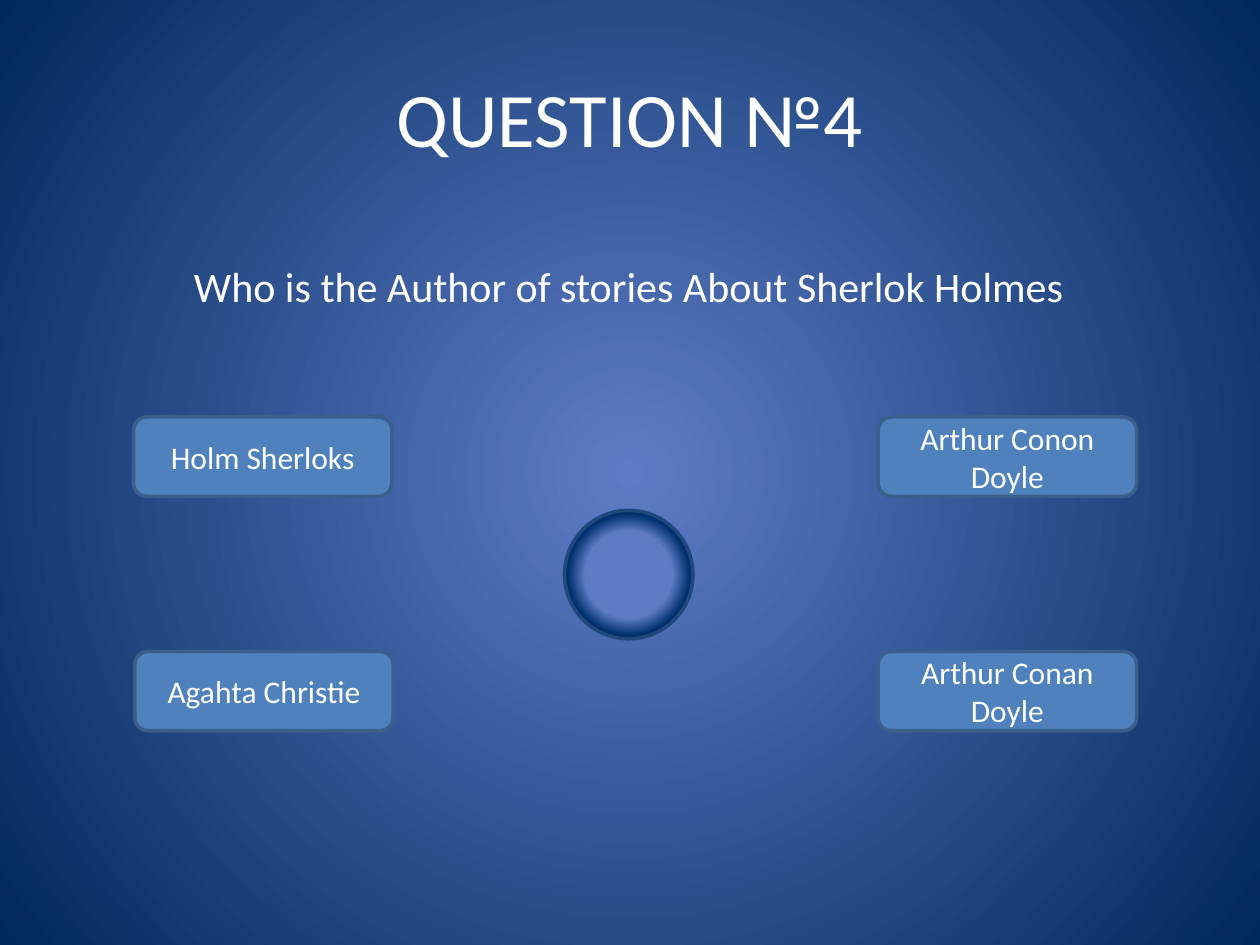
"""Build a quiz slide with a question and four answer buttons."""
from dataclasses import dataclass

import lxml.etree
import pptx
import pptx.dml.color
import pptx.dml.fill
import pptx.enum.shapes
import pptx.enum.text
import pptx.oxml.ns
import pptx.util

Inches = pptx.util.Inches
Shapes = pptx.enum.shapes.MSO_SHAPE
Anchor = pptx.enum.text.MSO_ANCHOR
qn = pptx.oxml.ns.qn

WHITE = "FFFFFF"
GLOW = "5E7CC5"
BUTTON_SIZE = (2.05, 0.63)


@dataclass
class Answer:
    text: str
    left: float
    top: float


ANSWERS = [
    Answer("Holm Sherloks", 1.06, 3.31),
    Answer("Arthur Conon Doyle", 6.97, 3.31),
    Answer("Agahta Christie", 1.07, 5.17),
    Answer("Arthur Conan Doyle", 6.97, 5.17),
]


def color(value: str) -> pptx.dml.color.RGBColor:
    return pptx.dml.color.RGBColor.from_string(value)


def radial_fill(fill: pptx.dml.fill.FillFormat, element, stops: list[tuple[float, str]]) -> None:
    fill.gradient()
    for stop, (position, value) in zip(fill.gradient_stops, stops):
        stop.position = position
        stop.color.rgb = color(value)
    gradient = next(element.iter(qn("a:gradFill")))
    gradient.remove(gradient.find(qn("a:lin")))
    circle = lxml.etree.SubElement(gradient, qn("a:path"), path="circle")
    center = dict.fromkeys("ltrb", "50000")
    lxml.etree.SubElement(circle, qn("a:fillToRect"), center)


def write(box, text: str, *, size: float, anchor=Anchor.MIDDLE) -> None:
    frame = box.text_frame
    frame.word_wrap = True
    frame.vertical_anchor = anchor
    para = frame.paragraphs[0]
    para.alignment = pptx.enum.text.PP_ALIGN.CENTER
    span = para.add_run()
    span.text = text
    span.font.name = "Calibri"
    span.font.size = pptx.util.Pt(size)
    span.font.color.rgb = color(WHITE)


def add_text(page, text: str, bounds: tuple[float, ...], **style) -> None:
    write(page.shapes.add_textbox(*map(Inches, bounds)), text, **style)


def add_outlined(page, kind, bounds: tuple[float, ...], line: str):
    shape = page.shapes.add_shape(kind, *map(Inches, bounds))
    shape.shadow.inherit = False
    shape.line.color.rgb = color(line)
    shape.line.width = pptx.util.Pt(2)
    return shape


def add_answer(page, answer: Answer) -> None:
    bounds = (answer.left, answer.top, *BUTTON_SIZE)
    button = add_outlined(page, Shapes.ROUNDED_RECTANGLE, bounds, "3A5F8C")
    button.fill.solid()
    button.fill.fore_color.rgb = color("4F81BD")
    write(button, answer.text, size=18)


def main() -> None:
    deck = pptx.Presentation()
    deck.slide_width, deck.slide_height = Inches(10), Inches(7.5)
    page = deck.slides.add_slide(deck.slide_layouts[6])
    radial_fill(page.background.fill, page.element, [(0, GLOW), (1, "00295C")])

    add_text(page, "QUESTION №4", (0.5, 0.3, 9, 1.25), size=44)
    add_text(page, "Who is the Author of stories About Sherlok Holmes",
             (0.66, 2.02, 8.66, 0.5), size=24, anchor=Anchor.TOP)
    for answer in ANSWERS:
        add_answer(page, answer)

    orb = add_outlined(page, Shapes.OVAL, (4.48, 4.05, 1.02, 1.02), "1F497D")
    radial_fill(orb.fill, orb.element, [(0.48, GLOW), (0.67, "00316D")])
    deck.save("out.pptx")


if __name__ == "__main__":
    main()
